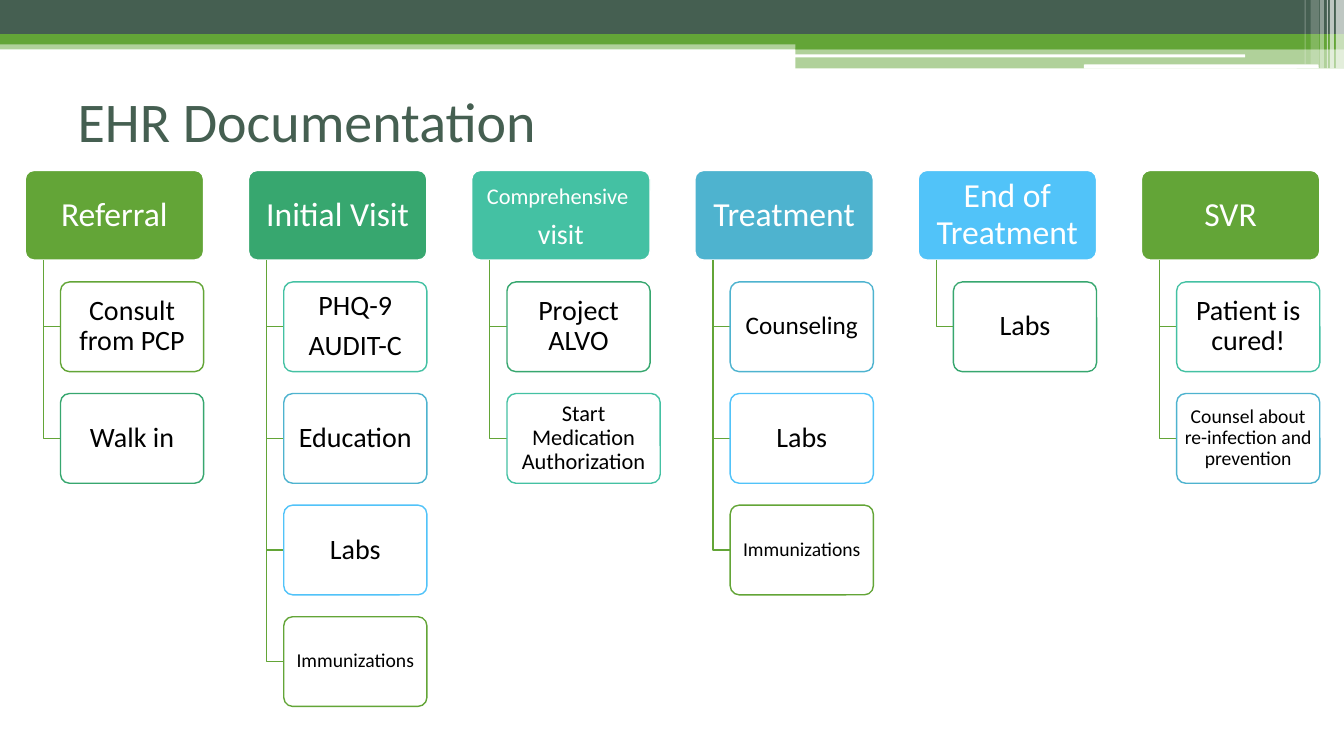
from dataclasses import dataclass
from itertools import cycle
from typing import Optional

from lxml.etree import SubElement
from pptx import Presentation
from pptx.dml.color import RGBColor
from pptx.enum.shapes import MSO_SHAPE
from pptx.enum.text import MSO_ANCHOR, PP_ALIGN
from pptx.oxml.ns import qn
from pptx.shapes.autoshape import Shape
from pptx.slide import Slide
from pptx.util import Inches, Pt


@dataclass(frozen=True)
class Theme:
    font: str = "Calibri"
    dark: str = "455F51"
    green: str = "63A537"
    white: str = "FFFFFF"
    black: str = "000000"
    accents: tuple[str, ...] = ("63A537", "37A76F", "44C1A3", "4EB3CF", "51C3F9")
    title: int = 40
    head: int = 24
    card: int = 20
    mid: int = 18
    small: int = 16
    tiny: int = 14


@dataclass(frozen=True)
class Box:
    left: float
    top: float
    width: float
    height: float


@dataclass(frozen=True)
class Bar:
    box: Box
    color: str
    alpha: int = 100
    round: bool = False


@dataclass(frozen=True)
class Card:
    text: str
    size: int
    lead: Optional[int] = None
    width: float = 1.42


@dataclass(frozen=True)
class Step:
    head: Card
    cards: tuple[Card, ...]


THEME = Theme()
LEFT, TOP = 0.25, 1.69
PITCH = 11.07 / 5
ROW = PITCH / 2
HEAD, HIGH = 1.77, 0.89
STEM, INDENT = 0.18, 0.35

BARS = (
    Bar(Box(0, 0.4, 13.33, 0.09), THEME.green, 50),
    Bar(Box(0, 0, 13.33, 0.34), THEME.dark),
    Bar(Box(0, 0.34, 13.33, 0.1), THEME.green),
    Bar(Box(7.89, 0.39, 5.44, 0.1), THEME.green),
    Bar(Box(7.89, 0.48, 5.44, 0.2), THEME.green, 50),
    Bar(Box(7.88, 0.54, 4.47, 0.03), THEME.white, round=True),
    Bar(Box(10.75, 0.64, 2.33, 0.04), THEME.white, round=True),
    Bar(Box(13.25, 0, 0.08, 0.68), THEME.white, 65),
    Bar(Box(13.19, 0, 0.04, 0.68), THEME.white, 65),
    Bar(Box(13.16, 0, 0.01, 0.68), THEME.white, 60),
    Bar(Box(13.09, 0, 0.04, 0.68), THEME.white, 40),
    Bar(Box(13, 0, 0.08, 0.64), THEME.white, 20),
    Bar(Box(12.94, 0, 0.01, 0.64), THEME.white, 30),
)

LABS = Card("Labs", THEME.card)
SHOTS = Card("Immunizations", THEME.tiny)
STEPS = (
    Step(Card("Referral", THEME.head), (
        Card("Consult from PCP", THEME.card),
        Card("Walk in", THEME.card))),
    Step(Card("Initial Visit", THEME.head), (
        Card("PHQ-9\nAUDIT-C", THEME.card),
        Card("Education", THEME.card), LABS, SHOTS)),
    Step(Card("Comprehensive \nvisit", THEME.card, lead=THEME.small), (
        Card("Project ALVO", THEME.card),
        Card("Start Medication Authorization", THEME.small, width=1.52))),
    Step(Card("Treatment", THEME.head), (
        Card("Counseling", THEME.mid), LABS, SHOTS)),
    Step(Card("End of Treatment", THEME.head), (LABS,)),
    Step(Card("SVR", THEME.head), (
        Card("Patient is cured!", THEME.card),
        Card("Counsel about re-infection and prevention", THEME.tiny))),
)


def paint(shape: Shape, color: str, alpha: int = 100) -> None:
    shape.shadow.inherit = False
    shape.fill.solid()
    shape.fill.fore_color.rgb = RGBColor.from_string(color)
    if alpha < 100:
        tint = shape.fill._xPr.find(qn("a:solidFill"))[0]
        SubElement(tint, qn("a:alpha")).set("val", str(alpha * 1000))


def edge(shape: Shape, color: str) -> None:
    shape.line.color.rgb = RGBColor.from_string(color)
    shape.line.width = Pt(1)


def block(slide: Slide, box: Box, kind: MSO_SHAPE) -> Shape:
    return slide.shapes.add_shape(
        kind, Inches(box.left), Inches(box.top), Inches(box.width), Inches(box.height))


def draw_bar(slide: Slide, bar: Bar) -> None:
    kind = MSO_SHAPE.ROUNDED_RECTANGLE if bar.round else MSO_SHAPE.RECTANGLE
    shape = block(slide, bar.box, kind)
    paint(shape, bar.color, bar.alpha)
    shape.line.fill.background()


def write(shape: Shape, card: Card, color: str, inset: float) -> None:
    frame = shape.text_frame
    frame.word_wrap = True
    frame.vertical_anchor = MSO_ANCHOR.MIDDLE
    frame.margin_left = frame.margin_right = Inches(inset)
    frame.margin_top = frame.margin_bottom = Inches(0.03)
    frame.text = card.text
    for para in frame.paragraphs:
        para.alignment = PP_ALIGN.CENTER
        para.line_spacing = 0.9
        para.font.name = THEME.font
        para.font.size = Pt(card.size)
        para.font.color.rgb = RGBColor.from_string(color)
    for para in frame.paragraphs[:-1]:
        para.space_after = Pt(0.35 * card.size)
    if card.lead:
        para = frame.paragraphs[0]
        run = para.runs[0]
        run.text = run.text.strip()
        run.font.size = Pt(card.lead)
        para.add_run().text = " "


def draw_card(slide: Slide, card: Card, box: Box, fill: str, line: str,
              ink: str, inset: float, alpha: int = 100) -> None:
    shape = block(slide, box, MSO_SHAPE.ROUNDED_RECTANGLE)
    shape.adjustments[0] = 0.1
    paint(shape, fill, alpha)
    edge(shape, line)
    write(shape, card, ink, inset)


def draw_elbow(slide: Slide, left: float, base: float, mid: float, right: float) -> None:
    path = slide.shapes.build_freeform(Inches(left), Inches(base))
    path.add_line_segments(
        [(Inches(left), Inches(mid)), (Inches(right), Inches(mid))], close=False)
    shape = path.convert_to_shape()
    shape.shadow.inherit = False
    shape.fill.background()
    edge(shape, THEME.green)


def draw_steps(slide: Slide) -> None:
    heads, lines = cycle(THEME.accents), cycle(THEME.accents)
    for col, step in enumerate(STEPS):
        left = LEFT + col * PITCH
        draw_card(slide, step.head, Box(left, TOP, HEAD, HIGH),
                  next(heads), THEME.white, THEME.white, 0.05)
        for row, card in enumerate(step.cards, 1):
            box = Box(left + INDENT, TOP + row * ROW, card.width, HIGH)
            draw_elbow(slide, left + STEM, TOP + HIGH, box.top + HIGH / 2, box.left)
            draw_card(slide, card, box, THEME.white, next(lines), THEME.black, 0.03, 90)


def draw_title(slide: Slide) -> None:
    title = slide.shapes.title
    title.left, title.top = Inches(0.67), Inches(0.61)
    title.width, title.height = Inches(12), Inches(1.17)
    title.text_frame.text = "EHR Documentation"
    title.text_frame.vertical_anchor = MSO_ANCHOR.MIDDLE
    para = title.text_frame.paragraphs[0]
    para.alignment = PP_ALIGN.LEFT
    para.font.name = THEME.font
    para.font.size = Pt(THEME.title)
    para.font.color.rgb = RGBColor.from_string(THEME.dark)


def main() -> None:
    deck = Presentation()
    deck.slide_width, deck.slide_height = Inches(13.33), Inches(7.5)
    slide = deck.slides.add_slide(deck.slide_layouts[5])
    for bar in BARS:
        draw_bar(slide, bar)
    draw_title(slide)
    draw_steps(slide)
    deck.save("out.pptx")


if __name__ == "__main__":
    main()
